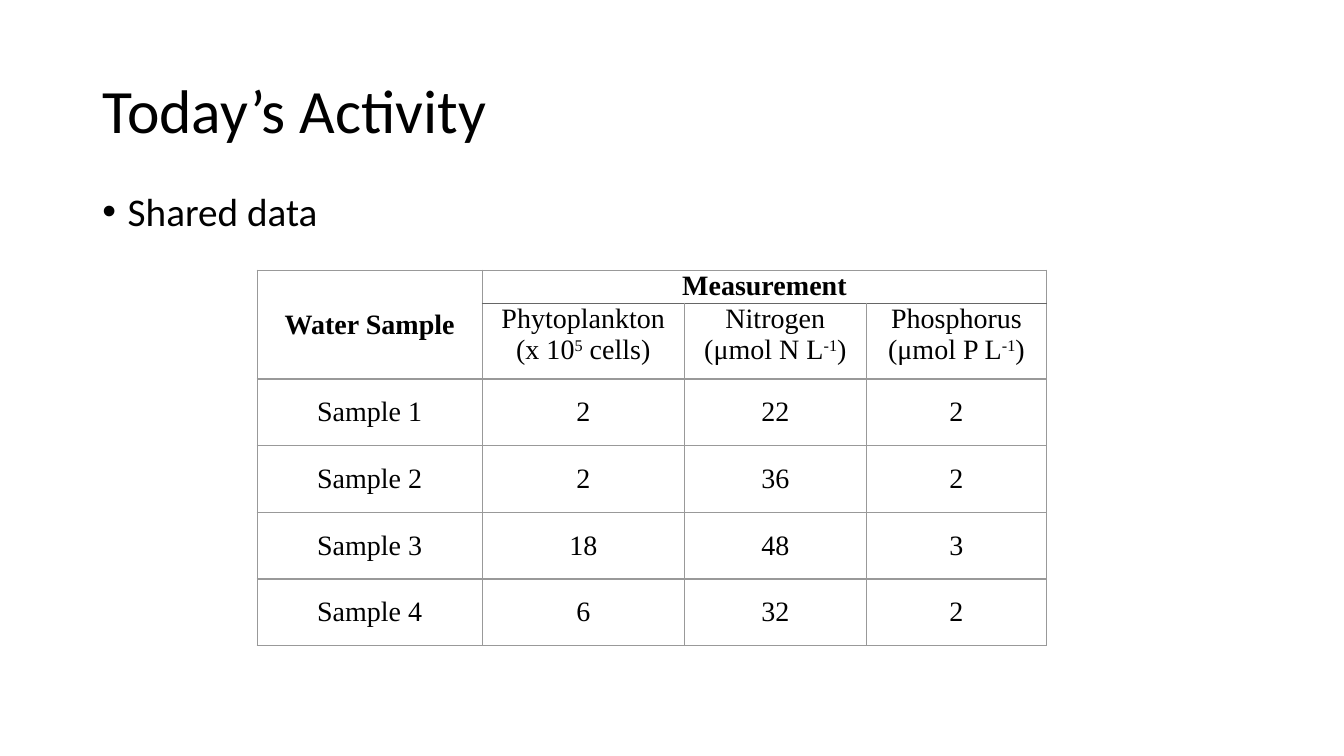
"""Build the shared water sample data slide."""
from dataclasses import dataclass

from lxml.etree import SubElement
from pptx import Presentation
from pptx.dml.color import RGBColor
from pptx.enum.text import MSO_ANCHOR, MSO_AUTO_SIZE, PP_ALIGN
from pptx.oxml.ns import qn
from pptx.util import Cm, Pt

BLACK = RGBColor(0x00, 0x00, 0x00)
GREY = RGBColor(0x99, 0x99, 0x99)
DARK_GREY = RGBColor(0x66, 0x66, 0x66)

TITLE_FONT = {"name": "Calibri", "size": Pt(44)}
BODY_FONT = {"name": "Calibri", "size": Pt(28)}
TABLE_FONT = {"name": "Times New Roman", "size": Pt(20)}

FRAME = {"word_wrap": True, "auto_size": MSO_AUTO_SIZE.NONE}
CELL = {"margin_left": Cm(0.18), "margin_right": Cm(0.18),
        "margin_top": 0, "margin_bottom": 0}
COLUMN_WIDTHS = (5.67, 5.1, 4.58, 4.55)
ROW_HEIGHTS = (0.84, 1.9) + (1.68,) * 4


@dataclass
class Measurement:
    """A measured quantity with its unit and values by sample."""
    label: str
    exponent: str
    ending: str
    values: tuple[int, ...]


MEASUREMENTS = (
    Measurement("Phytoplankton (x 10", "5", " cells)", (2, 2, 18, 6)),
    Measurement("Nitrogen (μmol N L", "-1", ")", (22, 36, 48, 32)),
    Measurement("Phosphorus (μmol P L", "-1", ")", (2, 2, 3, 2)),
)


def apply(target, formats: dict) -> None:
    """Set each format value on the target."""
    for name, value in formats.items():
        setattr(target, name, value)


def add_run(p, text: str, font: dict, bold: bool = False, baseline: int = 0) -> None:
    """Append a formatted run to a paragraph."""
    r = p.add_run()
    r.text = text
    apply(r.font, {**font, "bold": bold})
    r.font.color.rgb = BLACK
    if baseline:
        r.font._element.set("baseline", str(baseline))


def add_border(cell, side: str, color: RGBColor = GREY, width: float = 1) -> None:
    """Draw one edge of a table cell."""
    line = SubElement(cell._tc.get_or_add_tcPr(), qn(f"a:ln{side}"), w=str(Pt(width)))
    fill = SubElement(line, qn("a:solidFill"))
    SubElement(fill, qn("a:srgbClr"), val=str(color))


def write_cell(cell, text: str, bold: bool = False, middle: bool = True):
    """Write centred text in a cell and return its paragraph."""
    cell.vertical_anchor = MSO_ANCHOR.MIDDLE if middle else MSO_ANCHOR.TOP
    p = cell.text_frame.paragraphs[0]
    p.alignment = PP_ALIGN.CENTER
    add_run(p, text, TABLE_FONT, bold)
    return p


def add_title(s) -> None:
    """Place and fill the title."""
    sp = s.shapes.title
    apply(sp, {"left": Cm(2.33), "top": Cm(1.01), "width": Cm(29.21), "height": Cm(3.68)})
    tf = sp.text_frame
    apply(tf, {**FRAME, "vertical_anchor": MSO_ANCHOR.MIDDLE})
    p = tf.paragraphs[0]
    apply(p, {"alignment": PP_ALIGN.LEFT, "line_spacing": 0.9})
    add_run(p, "Today’s Activity", TITLE_FONT)


def add_bullet(s) -> None:
    """Add the bulleted body text."""
    tf = s.shapes.add_textbox(Cm(2.33), Cm(4.72), Cm(29.21), Cm(12.09)).text_frame
    apply(tf, FRAME)
    p = tf.paragraphs[0]
    apply(p, {"line_spacing": 0.9, "space_before": Pt(10)})
    pPr = p._p.get_or_add_pPr()
    pPr.set("marL", str(Cm(0.64)))
    pPr.set("indent", str(-Cm(0.64)))
    SubElement(pPr, qn("a:buFont"), typeface="Arial")
    SubElement(pPr, qn("a:buChar"), char="•")
    add_run(p, "Shared data", BODY_FONT)


def add_data_table(s) -> None:
    """Add the table of measurements by water sample."""
    table = s.shapes.add_table(len(ROW_HEIGHTS), len(COLUMN_WIDTHS), Cm(6.48), Cm(6.81),
                               Cm(sum(COLUMN_WIDTHS)), Cm(sum(ROW_HEIGHTS))).table
    apply(table, {"first_row": False, "horz_banding": False})
    for column, width in zip(table.columns, COLUMN_WIDTHS):
        column.width = Cm(width)
    for row, height in zip(table.rows, ROW_HEIGHTS):
        row.height = Cm(height)

    for i, row in enumerate(table.rows):
        for j, cell in enumerate(row.cells):
            apply(cell, CELL)
            for side in "LRTB":
                under_heading = j > 0 and (i, side) in ((0, "B"), (1, "T"))
                add_border(cell, side, *((DARK_GREY, 1.5) if under_heading else ()))
            cell.fill.background()

    table.cell(0, 0).merge(table.cell(1, 0))
    table.cell(0, 1).merge(table.cell(0, 3))
    write_cell(table.cell(0, 0), "Water Sample", bold=True)
    write_cell(table.cell(0, 1), "Measurement", bold=True, middle=False)
    for i in range(1, 5):
        write_cell(table.cell(i + 1, 0), f"Sample {i}")
    for j, measurement in enumerate(MEASUREMENTS, 1):
        p = write_cell(table.cell(1, j), measurement.label, middle=False)
        add_run(p, measurement.exponent, TABLE_FONT, baseline=30000)
        add_run(p, measurement.ending, TABLE_FONT)
        for i, value in enumerate(measurement.values, 2):
            write_cell(table.cell(i, j), str(value))


def main() -> None:
    """Build and save the presentation."""
    prs = Presentation()
    apply(prs, {"slide_width": Cm(33.87), "slide_height": Cm(19.05)})
    s = prs.slides.add_slide(prs.slide_layouts[5])
    add_title(s)
    add_bullet(s)
    add_data_table(s)
    prs.save("out.pptx")


if __name__ == "__main__":
    main()
